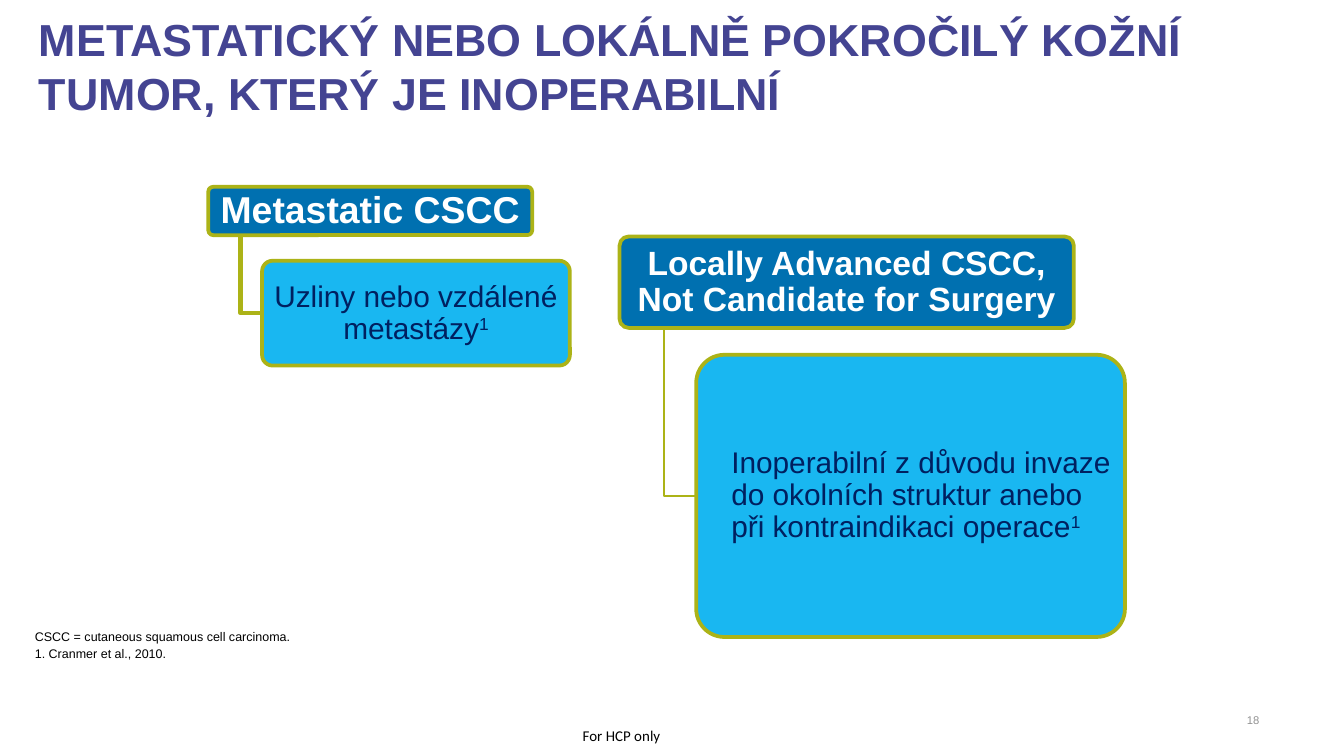
"""Build a slide on metastatic or locally advanced inoperable skin tumours."""
from lxml import etree
from pptx import Presentation
from pptx.dml.color import RGBColor
from pptx.enum import shapes, text
from pptx.oxml.ns import qn
from pptx.util import Inches, Pt

WHITE = RGBColor(0xFF, 0xFF, 0xFF)
BLACK = RGBColor(0, 0, 0)
GREY = RGBColor(0x92, 0x92, 0x92)
PURPLE = RGBColor(0x44, 0x44, 0x92)
NAVY = RGBColor(0x00, 0x20, 0x60)
BLUE = RGBColor(0x00, 0x70, 0xB0)
SKY = RGBColor(0x00, 0xB0, 0xF0)
OLIVE = RGBColor(0xAC, 0xB3, 0x17)
LEFT, CENTER, RIGHT = text.PP_ALIGN.LEFT, text.PP_ALIGN.CENTER, text.PP_ALIGN.RIGHT
MIDDLE, BOTTOM = text.MSO_ANCHOR.MIDDLE, text.MSO_ANCHOR.BOTTOM


def set_frame(frame, insets, anchor):
    """Set wrapping, anchor and left, top, right and bottom insets."""
    frame.word_wrap = True
    frame.auto_size = text.MSO_AUTO_SIZE.NONE
    frame.vertical_anchor = anchor
    frame.margin_left, frame.margin_top, frame.margin_right, frame.margin_bottom = map(Inches, insets)


def format_text(frame, size, color, align, bold=False, font="Arial"):
    """Format every run of a text frame."""
    for paragraph in frame.paragraphs:
        paragraph.alignment = align
        for run in paragraph.runs:
            run.font.name = font
            run.font.size = Pt(size)
            run.font.bold = bold
            run.font.color.rgb = color


def set_title(page, lines):
    """Fill and place the title placeholder."""
    title = page.shapes.title
    title.left, title.top, title.width, title.height = map(Inches, (0, 0, 10, 0.97))
    frame = title.text_frame
    frame.text = "\n".join(lines)
    set_frame(frame, (0.29, 0.05, 0.1, 0.05), MIDDLE)
    format_text(frame, 24, PURPLE, LEFT, bold=True)


def add_note(page, place, lines, size, color, align, anchor, font="Arial"):
    """Add a small text box."""
    frame = page.shapes.add_textbox(*map(Inches, place)).text_frame
    frame.text = "\n".join(lines)
    set_frame(frame, (0, 0, 0, 0), anchor)
    format_text(frame, size, color, align, font=font)
    for paragraph in frame.paragraphs[1:]:
        paragraph.space_before = Pt(size * 0.2)


def add_box(page, place, words, fill, size, color, insets, align=CENTER, bold=False, reference=None):
    """Add a rounded box with text and an optional superscript reference."""
    box = page.shapes.add_shape(shapes.MSO_SHAPE.ROUNDED_RECTANGLE, *map(Inches, place))
    box.adjustments[0] = 0.1
    box.shadow.inherit = False
    box.fill.solid()
    box.fill.fore_color.rgb = fill
    box.line.color.rgb = OLIVE
    box.line.width = Pt(2)
    frame = box.text_frame
    frame.text = words
    set_frame(frame, insets, MIDDLE)
    paragraph = frame.paragraphs[0]
    paragraph.line_spacing = 0.9
    if reference:
        mark = paragraph.add_run()
        mark.text = reference
        mark._r.get_or_add_rPr().set("baseline", "30000")
    format_text(frame, size, color, align, bold)
    return box


def set_opacity(box, percent):
    """Make a solid fill partly transparent."""
    color = box.fill._xPr.find(qn("a:solidFill"))[0]
    etree.SubElement(color, qn("a:alpha")).set("val", str(percent * 1000))


def add_branch(page, head, detail, left, width):
    """Draw an elbow from the bottom of the head to the left of the detail."""
    x, middle = Inches(left), detail.top + detail.height // 2
    builder = page.shapes.build_freeform(x, head.top + head.height)
    builder.add_line_segments([(x, middle), (detail.left, middle)], close=False)
    branch = builder.convert_to_shape()
    branch.shadow.inherit = False
    branch.fill.background()
    branch.line.color.rgb = OLIVE
    branch.line.width = Pt(width)


def add_group(page, head_place, head_text, head_size, detail_place, detail_text,
              detail_insets, detail_align, branch_left, branch_width):
    """Add a heading box with its branch and detail box."""
    head = add_box(page, head_place, head_text, BLUE, head_size, WHITE,
                   (0.04, 0.04, 0.04, 0.03), bold=True)
    detail = add_box(page, detail_place, detail_text, SKY, 16, NAVY,
                     detail_insets, detail_align, reference="1")
    set_opacity(detail, 90)
    add_branch(page, head, detail, branch_left, branch_width)


def main():
    """Build and save the deck."""
    deck = Presentation()
    deck.slide_width, deck.slide_height = Inches(10), Inches(5.625)
    page = deck.slides.add_slide(deck.slide_layouts[5])
    set_title(page, ["METASTATICKÝ NEBO LOKÁLNĚ POKROČILÝ KOŽNÍ",
                     "TUMOR, KTERÝ JE INOPERABILNÍ"])
    add_group(page, (4.61, 1.76, 3.38, 0.68), "Locally Advanced CSCC, Not Candidate for Surgery", 18,
              (5.18, 2.64, 3.19, 2.1),
              "Inoperabilní z důvodu invaze do okolních struktur anebo při kontraindikaci operace",
              (0.2, 0.02, 0.03, 0.02), LEFT, 4.94, 1.5)
    add_group(page, (1.55, 1.39, 2.41, 0.36), "Metastatic CSCC", 20,
              (1.95, 1.94, 2.29, 0.78), "Uzliny nebo vzdálené metastázy",
              (0.03, 0.03, 0.03, 0.02), CENTER, 1.79, 2.25)
    add_note(page, (0.26, 4.49, 7.97, 0.43),
             ["CSCC = cutaneous squamous cell carcinoma.", "1. Cranmer et al., 2010."],
             6.7, BLACK, LEFT, BOTTOM)
    add_note(page, (3.84, 5.35, 1.57, 0.25), ["For HCP only"], 8, BLACK, CENTER, MIDDLE, "Calibri")
    add_note(page, (8.84, 5.31, 0.53, 0.19), ["18"], 6, GREY, RIGHT, text.MSO_ANCHOR.TOP)
    deck.save("out.pptx")


if __name__ == "__main__":
    main()
